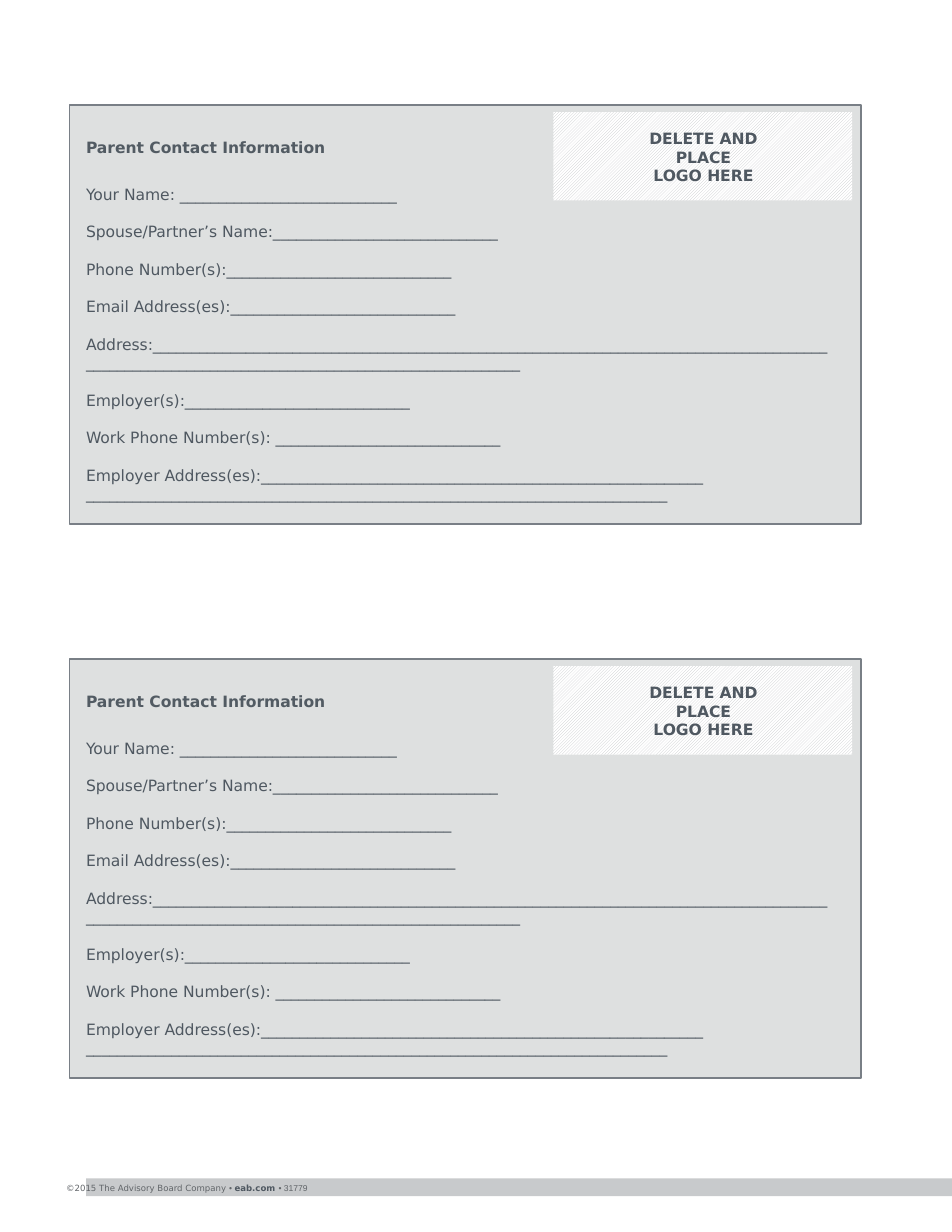
from dataclasses import dataclass

import pptx
import pptx.dml.color
import pptx.enum.dml
import pptx.enum.shapes
import pptx.enum.text
import pptx.oxml.ns
import pptx.util
from lxml import etree

Pt = pptx.util.Pt
Align = pptx.enum.text.PP_ALIGN
Anchor = pptx.enum.text.MSO_ANCHOR

SLATE, HEADING, GREY = "4F5861", "525B63", "616569"
BAR, PANEL, BORDER, WHITE = "C8CACC", "DEE0E0", "797F86", "FFFFFF"
BLANK_LINE = 12.05


@dataclass(frozen=True)
class Box:
    left: float
    top: float
    width: float
    height: float

    def lowered(self, distance: float) -> "Box":
        return Box(self.left, self.top + distance, self.width, self.height)

    def lengths(self) -> list:
        return [Pt(value) for value in (self.left, self.top, self.width, self.height)]


@dataclass(frozen=True)
class Field:
    label: str
    blanks: int
    space_before: float = BLANK_LINE


@dataclass(frozen=True)
class Card:
    offset: float
    heading_placeholder: int
    list_placeholder: int


PANEL_BOX = Box(44.7, 67.5, 509, 269.3)
LOGO_BOX = Box(355.7, 72, 192.2, 56.9)
LOGO_TEXT_BOX = Box(401.8, 88.6, 100.8, 24.5)
HEADING_BOX = Box(55.3, 88.6, 301, 12.2)
LIST_BOX = Box(55.3, 118.8, 480.2, 218.2)

FIELDS = [
    Field("Your Name: ", 28, 0),
    Field("Spouse/Partner’s Name:", 29),
    Field("Phone Number(s):", 29),
    Field("Email Address(es):", 29),
    Field("Address:", 143),
    Field("Employer(s):", 29),
    Field("Work Phone Number(s): ", 29),
    Field("Employer Address(es):", 57),
    Field("", 75, 0),
]
CARDS = [Card(0, 0, 2), Card(356.2, 3, 4)]


def rgb(color: str) -> pptx.dml.color.RGBColor:
    return pptx.dml.color.RGBColor.from_string(color)


def add_rectangle(slide, box: Box, fill: str, line: str = ""):
    shape = slide.shapes.add_shape(pptx.enum.shapes.MSO_SHAPE.RECTANGLE, *box.lengths())
    shape.shadow.inherit = False
    shape.fill.solid()
    shape.fill.fore_color.rgb = rgb(fill)
    if line:
        shape.line.color.rgb = rgb(line)
        shape.line.width = Pt(1)
    else:
        shape.line.fill.background()
    return shape


def prepare_frame(shape, anchor=Anchor.TOP):
    frame = shape.text_frame
    frame.word_wrap = True
    frame.auto_size = pptx.enum.text.MSO_AUTO_SIZE.NONE
    frame.vertical_anchor = anchor
    frame.margin_left = frame.margin_top = frame.margin_right = frame.margin_bottom = 0
    return frame


def add_text_box(slide, box: Box, anchor=Anchor.TOP):
    return prepare_frame(slide.shapes.add_textbox(*box.lengths()), anchor)


def place_placeholder(slide, index: int, box: Box):
    """Move a placeholder to its box and in front of the panel."""
    shape = next(item for item in slide.placeholders if item.placeholder_format.idx == index)
    shape.left, shape.top, shape.width, shape.height = box.lengths()
    slide.shapes._spTree.append(shape._element)
    return prepare_frame(shape)


def write(paragraph, text: str, *, size: float = 10, color: str = SLATE, bold: bool = False,
          font: str = "DejaVu Sans", align=Align.LEFT, space_before: float = 0) -> None:
    properties = paragraph._p.get_or_add_pPr()
    if properties.find(pptx.oxml.ns.qn("a:buNone")) is None:
        properties.set("marL", "0")
        properties.set("indent", "0")
        etree.SubElement(properties, pptx.oxml.ns.qn("a:buNone"))
    paragraph.alignment = align
    paragraph.space_before = Pt(space_before)
    for number, line in enumerate(text.split("\n")):
        if number:
            paragraph.add_line_break()
        run = paragraph.add_run()
        run.text = line
        run.font.size = Pt(size)
        run.font.name = font
        run.font.bold = bold
        run.font.color.rgb = rgb(color)


def add_footer(slide) -> None:
    add_rectangle(slide, Box(55.4, 757.5, 556.6, 11.5), BAR)
    paragraph = add_text_box(slide, Box(42.5, 760.3, 194.4, 6.5)).paragraphs[0]
    write(paragraph, "©2015 The Advisory Board Company ", size=5.5, color=GREY)
    write(paragraph, "• ", size=5.5, color=GREY, font="Arial")
    write(paragraph, "eab.com ", size=5.5, bold=True)
    write(paragraph, "• 31779", size=5.5, color=GREY, font="Arial")


def add_card(slide, card: Card) -> None:
    # Panel and hatched logo area
    add_rectangle(slide, PANEL_BOX.lowered(card.offset), PANEL, BORDER)
    logo = add_rectangle(slide, LOGO_BOX.lowered(card.offset), WHITE)
    logo.fill.patterned()
    logo.fill.pattern = pptx.enum.dml.MSO_PATTERN.LIGHT_UPWARD_DIAGONAL
    logo.fill.fore_color.rgb = rgb(BAR)
    logo.fill.back_color.rgb = rgb(WHITE)
    logo_frame = add_text_box(slide, LOGO_TEXT_BOX.lowered(card.offset), Anchor.MIDDLE)
    write(logo_frame.paragraphs[0], "DELETE AND PLACE\nLOGO HERE", bold=True, align=Align.CENTER)

    # Form lines
    form = place_placeholder(slide, card.list_placeholder, LIST_BOX.lowered(card.offset))
    for number, field in enumerate(FIELDS):
        paragraph = form.add_paragraph() if number else form.paragraphs[0]
        write(paragraph, field.label + "_" * field.blanks, space_before=field.space_before)

    # Heading
    heading = place_placeholder(slide, card.heading_placeholder, HEADING_BOX.lowered(card.offset))
    write(heading.paragraphs[0], "Parent Contact Information", color=HEADING, bold=True)


def main() -> None:
    presentation = pptx.Presentation()
    presentation.slide_width, presentation.slide_height = Pt(612), Pt(792)
    slide = presentation.slides.add_slide(presentation.slide_layouts.get_by_name("Comparison"))
    add_footer(slide)
    for card in CARDS:
        add_card(slide, card)

    # Unused placeholders
    for shape in list(slide.placeholders):
        if not shape.text_frame.text:
            shape._element.getparent().remove(shape._element)
    presentation.save("out.pptx")


if __name__ == "__main__":
    main()
